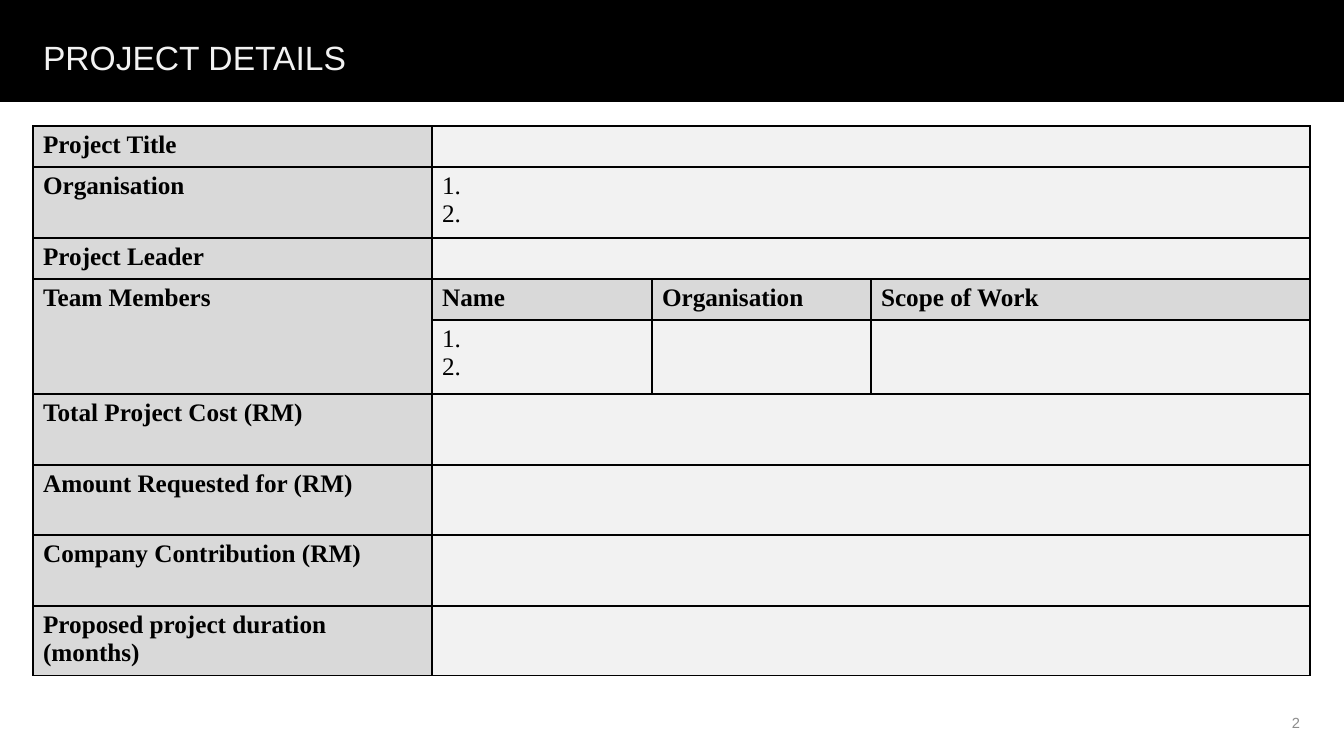
from lxml.etree import SubElement
from pptx import Presentation
from pptx.dml.color import RGBColor
from pptx.enum.shapes import MSO_SHAPE
from pptx.enum.text import MSO_ANCHOR, MSO_AUTO_SIZE, PP_ALIGN
from pptx.oxml.ns import qn
from pptx.util import Emu, Pt

COLORS = {
    "black": "000000",
    "label": "D9D9D9",
    "field": "F2F2F2",
    "number": "8C8C8C",
}
COLUMNS = [399, 220, 219, 439]
ROW_HEIGHTS = [41, 71, 41, 41, 74, 71, 70, 71, 70]
NUMBERS = ["1.", "2."]
ROWS = [
    ["Project Title", None],
    ["Organisation", NUMBERS],
    ["Project Leader", None],
    ["Team Members", "Name", "Organisation", "Scope of Work"],
    [None, NUMBERS, None, None],
    ["Total Project Cost (RM)", None],
    ["Amount Requested for (RM)", None],
    ["Company Contribution (RM)", None],
    ["Proposed project duration (months)", None],
]
TEAM_ROW = 3


def px(n):
    return Emu(round(n * 12192000 / 1344))


def rgb(name):
    return RGBColor.from_string(COLORS[name])


class Deck:
    """Hold the slide and its style, and draw each kind of element."""

    def __init__(self, prs):
        self.s = prs.slides.add_slide(prs.slide_layouts[5])
        self.heading_font = "Arial"
        self.table_font = "Times New Roman"

    def run(self, p, text, font, size, color, bold=False):
        r = p.add_run()
        r.text = text
        r.font.name = font
        r.font.size = Pt(size)
        r.font.bold = bold
        r.font.color.rgb = rgb(color)

    def band(self, x, y, w, h):
        sp = self.s.shapes.add_shape(MSO_SHAPE.RECTANGLE, px(x), px(y), px(w), px(h))
        sp.shadow.inherit = False
        sp.fill.solid()
        sp.fill.fore_color.rgb = rgb("black")
        sp.line.color.rgb = rgb("black")
        sp.line.width = Pt(1)

    def title(self, text, x, y, w, h):
        sp = self.s.shapes.title
        sp.element.getparent().append(sp.element)
        sp.left, sp.top, sp.width, sp.height = px(x), px(y), px(w), px(h)
        tf = sp.text_frame
        tf.auto_size = MSO_AUTO_SIZE.NONE
        tf.word_wrap = True
        tf.vertical_anchor = MSO_ANCHOR.TOP
        tf.margin_left = tf.margin_right = px(10)
        tf.margin_top, tf.margin_bottom = px(9), 0
        p = tf.paragraphs[0]
        p.alignment = PP_ALIGN.LEFT
        self.run(p, text, self.heading_font, 24, "field")

    def page_number(self, text, x, y, w, h):
        tf = self.s.shapes.add_textbox(px(x), px(y), px(w), px(h)).text_frame
        tf.word_wrap = True
        tf.vertical_anchor = MSO_ANCHOR.MIDDLE
        p = tf.paragraphs[0]
        p.alignment = PP_ALIGN.RIGHT
        self.run(p, text, self.heading_font, 10.5, "number")

    def cell(self, cell, content, is_label):
        tcPr = cell._tc.get_or_add_tcPr()
        for side in ("a:lnL", "a:lnR", "a:lnT", "a:lnB"):
            ln = SubElement(tcPr, qn(side), w=str(Pt(1)))
            fill = SubElement(ln, qn("a:solidFill"))
            SubElement(fill, qn("a:srgbClr"), val=COLORS["black"])
        cell.fill.solid()
        cell.fill.fore_color.rgb = rgb("label" if is_label else "field")
        lines = [content] if isinstance(content, str) else content or []
        tf = cell.text_frame
        for i, line in enumerate(lines):
            p = tf.add_paragraph() if i else tf.paragraphs[0]
            self.run(p, line, self.table_font, 18, "black", is_label)

    def table(self, rows, x, y):
        frame = self.s.shapes.add_table(
            len(rows), len(COLUMNS), px(x), px(y),
            px(sum(COLUMNS)), px(sum(ROW_HEIGHTS)))
        table = frame.table
        table.first_row = table.horz_banding = False
        for column, width in zip(table.columns, COLUMNS):
            column.width = px(width)
        last = len(COLUMNS) - 1
        for i, (row, height) in enumerate(zip(rows, ROW_HEIGHTS)):
            table.rows[i].height = px(height)
            padded = row + [None] * (len(COLUMNS) - len(row))
            for j, content in enumerate(padded):
                self.cell(table.cell(i, j), content, j == 0 or i == TEAM_ROW)
            if len(row) == 2:
                table.cell(i, 1).merge(table.cell(i, last))
        table.cell(TEAM_ROW, 0).merge(table.cell(TEAM_ROW + 1, 0))


def main():
    prs = Presentation()
    prs.slide_width, prs.slide_height = px(1344), px(756)
    deck = Deck(prs)
    deck.band(0, 0, 1344, 101)
    deck.table(ROWS, 33, 126)
    deck.page_number("2", 1008, 703, 302, 40)
    deck.title("PROJECT DETAILS", 33, 28, 865, 50)
    prs.save("out.pptx")


if __name__ == "__main__":
    main()
